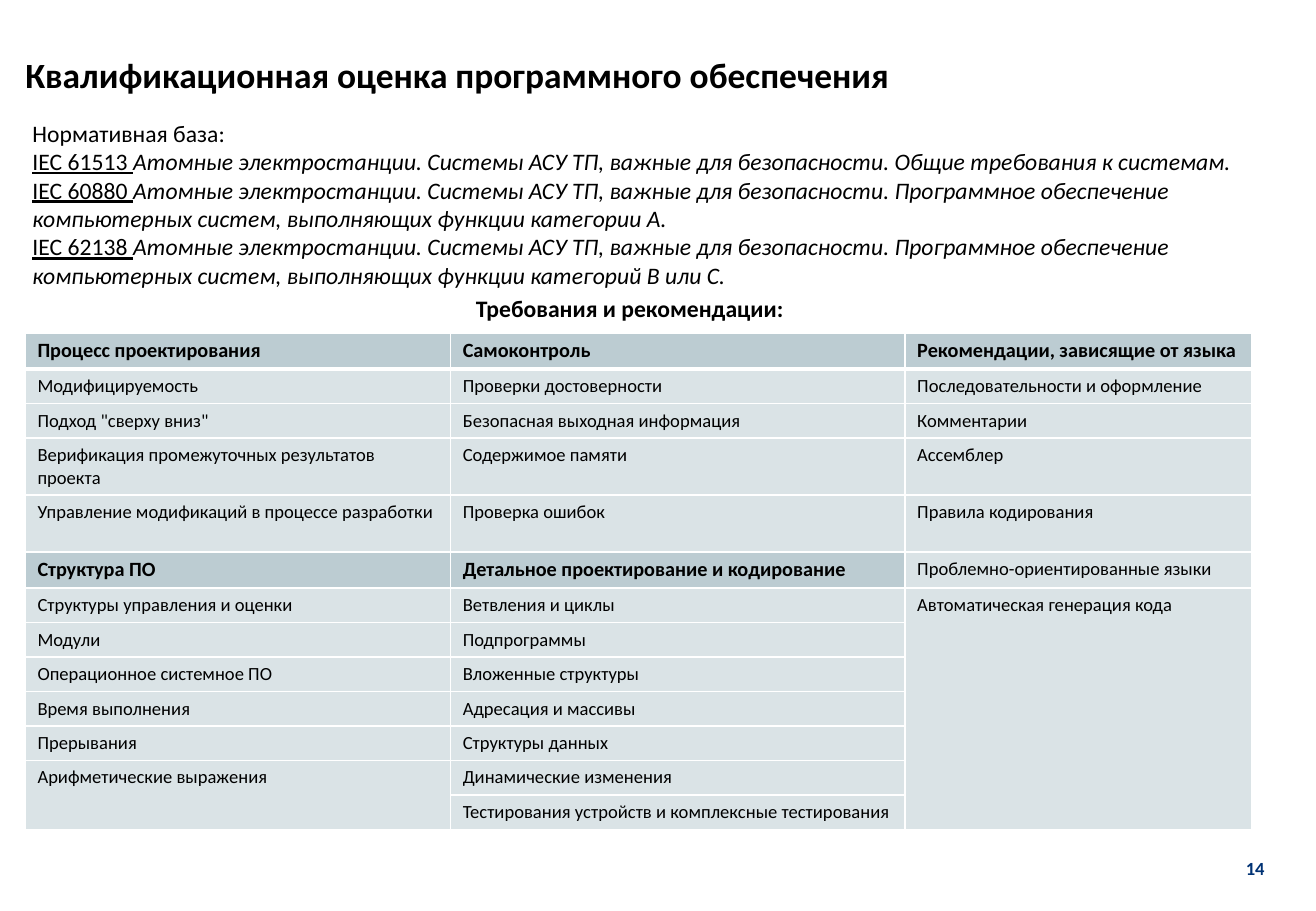
from lxml.etree import SubElement
from pptx import Presentation
from pptx.dml.color import RGBColor
from pptx.enum.text import MSO_ANCHOR, PP_ALIGN
from pptx.oxml.ns import qn
from pptx.util import Cm, Pt

BLACK = RGBColor(0x00, 0x00, 0x00)
NAVY = RGBColor(0x00, 0x32, 0x74)
WHITE = RGBColor(0xFF, 0xFF, 0xFF)
HEADER_FILL = RGBColor(0xBC, 0xCC, 0xD2)
BODY_FILL = RGBColor(0xDA, 0xE3, 0xE6)

TITLE = "Квалификационная оценка программного обеспечения"
REQUIREMENTS = "Требования и рекомендации:"
PAGE_NUMBER = "14"
PLANTS = "Атомные электростанции. Системы АСУ ТП, важные для безопасности. "
SOFTWARE = PLANTS + "Программное обеспечение компьютерных систем, выполняющих функции "
STANDARDS = [
    ("IEC 61513 ", PLANTS + "Общие требования к системам."),
    ("IEC 60880 ", SOFTWARE + "категории А."),
    ("IEC 62138 ", SOFTWARE + "категорий B или C."),
]
ROWS = [
    ("Процесс проектирования", "Самоконтроль", "Рекомендации, зависящие от языка"),
    ("Модифицируемость", "Проверки достоверности", "Последовательности и оформление"),
    ("Подход \"сверху вниз\"", "Безопасная выходная информация", "Комментарии"),
    ("Верификация промежуточных результатов проекта", "Содержимое памяти", "Ассемблер"),
    ("Управление модификаций в процессе разработки", "Проверка ошибок", "Правила кодирования"),
    ("Структура ПО", "Детальное проектирование и кодирование", "Проблемно-ориентированные языки"),
    ("Структуры управления и оценки", "Ветвления и циклы", "Автоматическая генерация кода"),
    ("Модули", "Подпрограммы", ""),
    ("Операционное системное ПО", "Вложенные структуры", ""),
    ("Время выполнения", "Адресация и массивы", ""),
    ("Прерывания", "Структуры данных", ""),
    ("Арифметические выражения", "Динамические изменения", ""),
    ("", "Тестирования устройств и комплексные тестирования", ""),
]
HEADER_CELLS = {(0, 0), (0, 1), (0, 2), (5, 0), (5, 1)}
MERGES = [((6, 2), (12, 2)), ((11, 0), (12, 0))]
COLUMN_WIDTHS = (8.89, 9.5, 7.24)
NORMAL_HEIGHT = 0.72
ROW_HEIGHTS = {0: 0.76, 3: 1.19, 4: 1.19, 5: 0.76}


def add_span(para, text, size=14, color=BLACK, bold=False, italic=False, underline=False):
    span = para.add_run()
    span.text = text
    font = span.font
    font.name, font.size, font.color.rgb = "Calibri", Pt(size), color
    font.bold, font.italic, font.underline = bold, italic, underline


def add_box(page, left, top, width, height, wrap=True):
    frame = page.shapes.add_textbox(Cm(left), Cm(top), Cm(width), Cm(height)).text_frame
    frame.word_wrap = wrap
    return frame


def set_borders(cell, row):
    properties = cell._tc.get_or_add_tcPr()
    thick_side = {0: "lnB", 1: "lnT"}.get(row)
    for side in ("lnL", "lnR", "lnT", "lnB"):
        points = 3 if side == thick_side else 1
        line = SubElement(properties, qn("a:" + side), w=str(Pt(points)))
        fill = SubElement(line, qn("a:solidFill"))
        SubElement(fill, qn("a:srgbClr"), val=str(WHITE))


def add_requirements_table(page):
    heights = [ROW_HEIGHTS.get(row, NORMAL_HEIGHT) for row in range(len(ROWS))]
    table = page.shapes.add_table(
        len(ROWS), len(COLUMN_WIDTHS), Cm(0.53), Cm(6.96),
        Cm(sum(COLUMN_WIDTHS)), Cm(sum(heights))).table
    table.horz_banding = False
    for column, width in zip(table.columns, COLUMN_WIDTHS):
        column.width = Cm(width)
    for table_row, height in zip(table.rows, heights):
        table_row.height = Cm(height)
    for row, texts in enumerate(ROWS):
        for column, text in enumerate(texts):
            cell = table.cell(row, column)
            is_header = (row, column) in HEADER_CELLS
            set_borders(cell, row)
            cell.fill.solid()
            cell.fill.fore_color.rgb = HEADER_FILL if is_header else BODY_FILL
            cell.margin_top = cell.margin_bottom = Cm(0.12)
            if text:
                add_span(cell.text_frame.paragraphs[0], text,
                         size=12 if is_header else 11, bold=is_header)
    for first, last in MERGES:
        table.cell(*first).merge(table.cell(*last))


def main():
    deck = Presentation()
    deck.slide_width, deck.slide_height = Cm(27.51), Cm(19.05)
    page = deck.slides.add_slide(deck.slide_layouts[6])

    title = add_box(page, 0.53, 1.22, 24.36, 0.84)
    title.margin_left = title.margin_top = title.margin_right = title.margin_bottom = 0
    title.paragraphs[0].line_spacing = 0.9
    add_span(title.paragraphs[0], TITLE, size=21, bold=True)

    standards = add_box(page, 0.43, 2.36, 25.81, 3.84)
    add_span(standards.paragraphs[0], "Нормативная база:")
    for code, name in STANDARDS:
        para = standards.add_paragraph()
        add_span(para, code, underline=True)
        add_span(para, name, italic=True)

    requirements = add_box(page, 9.7, 6.02, 6.96, 0.86, wrap=False)
    add_span(requirements.paragraphs[0], REQUIREMENTS, bold=True)

    add_requirements_table(page)

    number = add_box(page, 25.68, 17.42, 1.12, 1.47, wrap=False)
    number.vertical_anchor = MSO_ANCHOR.MIDDLE
    number.paragraphs[0].alignment = PP_ALIGN.CENTER
    add_span(number.paragraphs[0], PAGE_NUMBER, size=11, color=NAVY, bold=True)

    deck.save("out.pptx")


if __name__ == "__main__":
    main()
